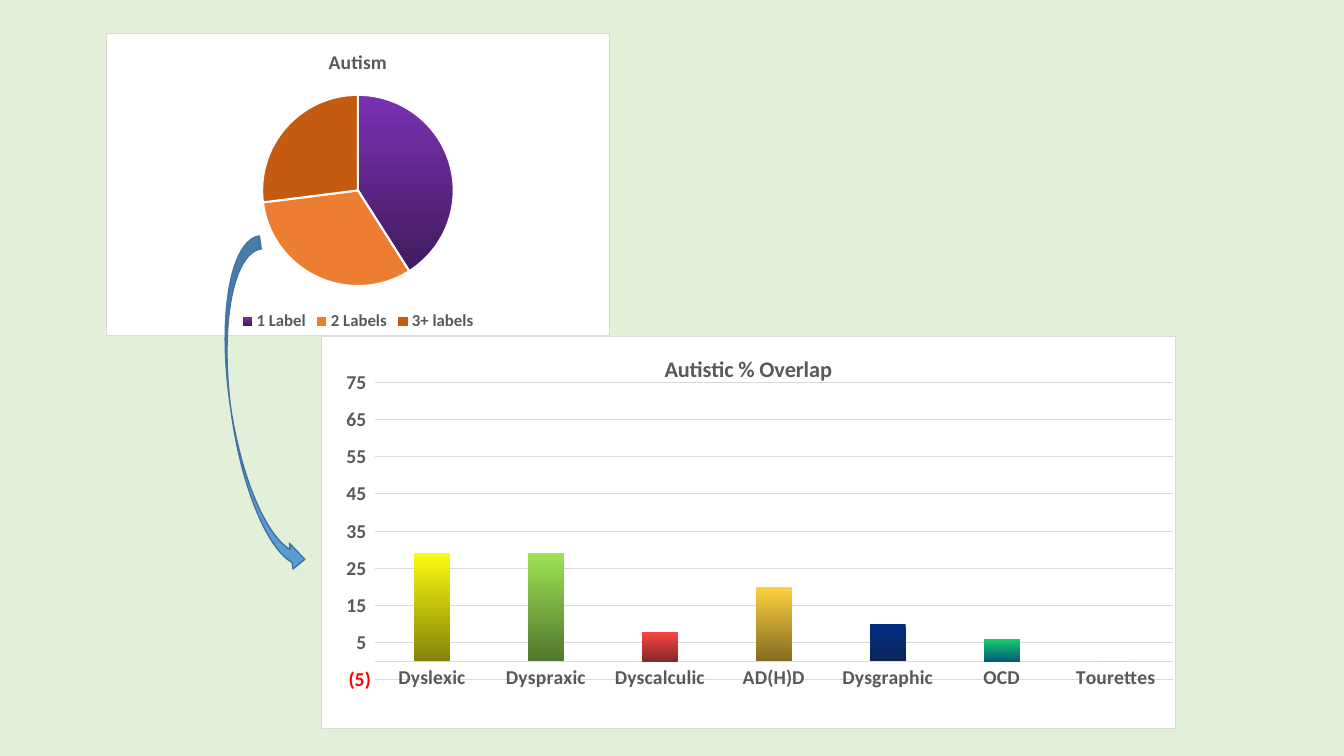
from dataclasses import dataclass
from typing import Any, Optional

import lxml.etree
import pptx
import pptx.chart.chart
import pptx.chart.data
import pptx.dml.color
import pptx.dml.fill
import pptx.enum.chart
import pptx.enum.shapes
import pptx.oxml
import pptx.oxml.ns
import pptx.slide
import pptx.util

RGBColor = pptx.dml.color.RGBColor
ChartType = pptx.enum.chart.XL_CHART_TYPE
qn = pptx.oxml.ns.qn

SLIDE_WIDTH = pptx.util.Inches(13.33)
SLIDE_HEIGHT = pptx.util.Inches(7.5)
FONT_NAME = "Calibri"

PALE_GREEN = RGBColor(0xE2, 0xF0, 0xD9)
WHITE = RGBColor(0xFF, 0xFF, 0xFF)
BLACK = RGBColor(0x00, 0x00, 0x00)
TEXT_GREY = RGBColor(0x59, 0x59, 0x59)
LINE_GREY = RGBColor(0xD9, 0xD9, 0xD9)
BLUE = RGBColor(0x5B, 0x9B, 0xD5)
DARK_BLUE = RGBColor(0x43, 0x73, 0x9E)
ORANGE = RGBColor(0xED, 0x7D, 0x31)
RUST = RGBColor(0xC5, 0x5A, 0x11)
PURPLE = (RGBColor(0x7B, 0x32, 0xB2), RGBColor(0x40, 0x1A, 0x5D))
YELLOW = (RGBColor(0xFB, 0xFB, 0x11), RGBColor(0x83, 0x83, 0x09))
GREEN = (RGBColor(0x9E, 0xE2, 0x56), RGBColor(0x52, 0x76, 0x2D))
RED = (RGBColor(0xFE, 0x44, 0x44), RGBColor(0x83, 0x2B, 0x2B))
GOLD = (RGBColor(0xFE, 0xCF, 0x40), RGBColor(0x84, 0x6C, 0x21))
NAVY = (RGBColor(0x01, 0x2D, 0x86), RGBColor(0x0E, 0x25, 0x57))
TEAL = (RGBColor(0x14, 0xCD, 0x68), RGBColor(0x03, 0x5C, 0x7D))


@dataclass(frozen=True)
class Box:
    """Place and size in percent of the slide's width and height."""
    left: float
    top: float
    width: float
    height: float

    def lengths(self) -> tuple[int, int, int, int]:
        return (int(SLIDE_WIDTH * self.left / 100), int(SLIDE_HEIGHT * self.top / 100),
                int(SLIDE_WIDTH * self.width / 100), int(SLIDE_HEIGHT * self.height / 100))


@dataclass(frozen=True)
class Category:
    label: str
    value: int
    colour: Any = None  # one colour, or a (top, bottom) pair


@dataclass(frozen=True)
class ChartPanel:
    kind: Any
    box: Box
    title: str
    title_size: int
    categories: tuple[Category, ...]
    outline: Optional[RGBColor] = None


PIE_PANEL = ChartPanel(ChartType.PIE, Box(7.88, 4.4, 37.51, 40), "Autism", 14, (
    Category("1 Label", 41, PURPLE),
    Category("2 Labels", 32, ORANGE),
    Category("3+ labels", 27, RUST),
), outline=WHITE)
OVERLAP_PANEL = ChartPanel(
    ChartType.COLUMN_CLUSTERED, Box(23.86, 44.4, 63.62, 52), "Autistic % Overlap", 16, (
        Category("Dyslexic", 29, YELLOW),
        Category("Dyspraxic", 29, GREEN),
        Category("Dyscalculic", 8, RED),
        Category("AD(H)D", 20, GOLD),
        Category("Dysgraphic", 10, NAVY),
        Category("OCD", 6, TEAL),
        Category("Tourettes", 0),
    ))
ARROW_BOX = Box(17.18, 31.47, 3.9, 44.93)
OVERLAP_PLOT = {"x": 0.063, "y": 0.118, "w": 0.934, "h": 0.759}


def set_attributes(target: Any, values: dict[str, Any]) -> None:
    for name, value in values.items():
        setattr(target, name, value)


def format_font(font: Any, size: int, colour: RGBColor = TEXT_GREY, bold: bool = True) -> None:
    set_attributes(font, {"name": FONT_NAME, "size": pptx.util.Pt(size), "bold": bold})
    font.color.rgb = colour


def format_line(line: Any, colour: RGBColor, width: float) -> None:
    line.color.rgb = colour
    line.width = pptx.util.Pt(width)


def paint(fill: pptx.dml.fill.FillFormat, colour: Any) -> None:
    if isinstance(colour, RGBColor):
        fill.solid()
        fill.fore_color.rgb = colour
        return
    fill.gradient()
    fill.gradient_angle = 270
    for stop, position, stop_colour in zip(fill.gradient_stops, (0, 1), colour):
        stop.position = position
        stop.color.rgb = stop_colour


def frame_chart(chart: pptx.chart.chart.Chart) -> None:
    """Give the chart area a white fill and a thin square border."""
    chart_space = chart.element
    if chart_space.find(qn("c:roundedCorners")) is None:
        corners = lxml.etree.Element(qn("c:roundedCorners"), val="0")
        chart_space.find(qn("c:chart")).addprevious(corners)
    frame = pptx.oxml.parse_xml(
        f'<c:spPr {pptx.oxml.ns.nsdecls("c", "a")}>'
        f'<a:solidFill><a:srgbClr val="{WHITE}"/></a:solidFill>'
        f'<a:ln w="{pptx.util.Pt(0.75)}"><a:solidFill><a:srgbClr val="{LINE_GREY}"/>'
        '</a:solidFill></a:ln></c:spPr>')
    chart_space.find(qn("c:chart")).addnext(frame)


def place_plot(chart: pptx.chart.chart.Chart, shares: dict[str, float]) -> None:
    """Fix the inner plot area in shares of the chart's size."""
    plot_area = chart.element.find(".//" + qn("c:plotArea"))
    for old_layout in plot_area.findall(qn("c:layout")):
        plot_area.remove(old_layout)
    layout = lxml.etree.Element(qn("c:layout"))
    manual = lxml.etree.SubElement(layout, qn("c:manualLayout"))
    settings = {"layoutTarget": "inner", "xMode": "edge", "yMode": "edge", **shares}
    for name, value in settings.items():
        lxml.etree.SubElement(manual, qn(f"c:{name}"), val=str(value))
    plot_area.insert(0, layout)


def add_panel(slide: pptx.slide.Slide, panel: ChartPanel) -> pptx.chart.chart.Chart:
    data = pptx.chart.data.CategoryChartData()
    data.categories = [category.label for category in panel.categories]
    data.add_series(panel.title, [category.value for category in panel.categories])
    chart = slide.shapes.add_chart(panel.kind, *panel.box.lengths(), data).chart
    format_font(chart.font, 10, BLACK, bold=False)
    chart.has_title = True
    chart.chart_title.text_frame.text = panel.title
    title_run = chart.chart_title.text_frame.paragraphs[0].runs[0]
    format_font(title_run.font, panel.title_size)
    series = chart.plots[0].series[0]
    for index, category in enumerate(panel.categories):
        if category.colour is not None:
            point_format = series.points[index].format
            paint(point_format.fill, category.colour)
            if panel.outline is not None:
                format_line(point_format.line, panel.outline, 1.5)
    frame_chart(chart)
    return chart


def add_pie(slide: pptx.slide.Slide) -> None:
    chart = add_panel(slide, PIE_PANEL)
    chart.plots[0].vary_by_categories = True
    chart.has_legend = True
    set_attributes(chart.legend, {
        "position": pptx.enum.chart.XL_LEGEND_POSITION.BOTTOM, "include_in_layout": False})
    format_font(chart.legend.font, 12)


def add_overlap_columns(slide: pptx.slide.Slide) -> None:
    chart = add_panel(slide, OVERLAP_PANEL)
    chart.has_legend = False
    set_attributes(chart.plots[0], {
        "gap_width": 219, "overlap": -27, "vary_by_categories": False})
    paint(chart.plots[0].series[0].format.fill, BLUE)
    no_tick = pptx.enum.chart.XL_TICK_MARK.NONE
    for axis in (chart.category_axis, chart.value_axis):
        set_attributes(axis, {"major_tick_mark": no_tick, "minor_tick_mark": no_tick})
        format_font(axis.tick_labels.font, 14)
    format_line(chart.category_axis.format.line, LINE_GREY, 0.75)
    value_axis = chart.value_axis
    set_attributes(value_axis, {
        "minimum_scale": -5, "maximum_scale": 75, "major_unit": 10, "has_major_gridlines": True})
    set_attributes(value_axis.tick_labels, {
        "number_format": r"#,##0_);[Red]\(#,##0\)", "number_format_is_linked": False})
    value_axis.format.line.fill.background()
    format_line(value_axis.major_gridlines.format.line, LINE_GREY, 0.75)
    place_plot(chart, OVERLAP_PLOT)


def add_arrow(slide: pptx.slide.Slide) -> None:
    arrow = slide.shapes.add_shape(
        pptx.enum.shapes.MSO_SHAPE.CURVED_RIGHT_ARROW, *ARROW_BOX.lengths())
    arrow.rotation = 352
    arrow.shadow.inherit = False
    paint(arrow.fill, BLUE)
    format_line(arrow.line, DARK_BLUE, 1)


def main() -> None:
    presentation = pptx.Presentation()
    set_attributes(presentation, {"slide_width": SLIDE_WIDTH, "slide_height": SLIDE_HEIGHT})
    slide = presentation.slides.add_slide(presentation.slide_layouts[6])
    paint(slide.background.fill, PALE_GREEN)
    # Pie at the back, then the arrow leading to the columns
    add_pie(slide)
    add_arrow(slide)
    add_overlap_columns(slide)
    presentation.save("out.pptx")


if __name__ == "__main__":
    main()
